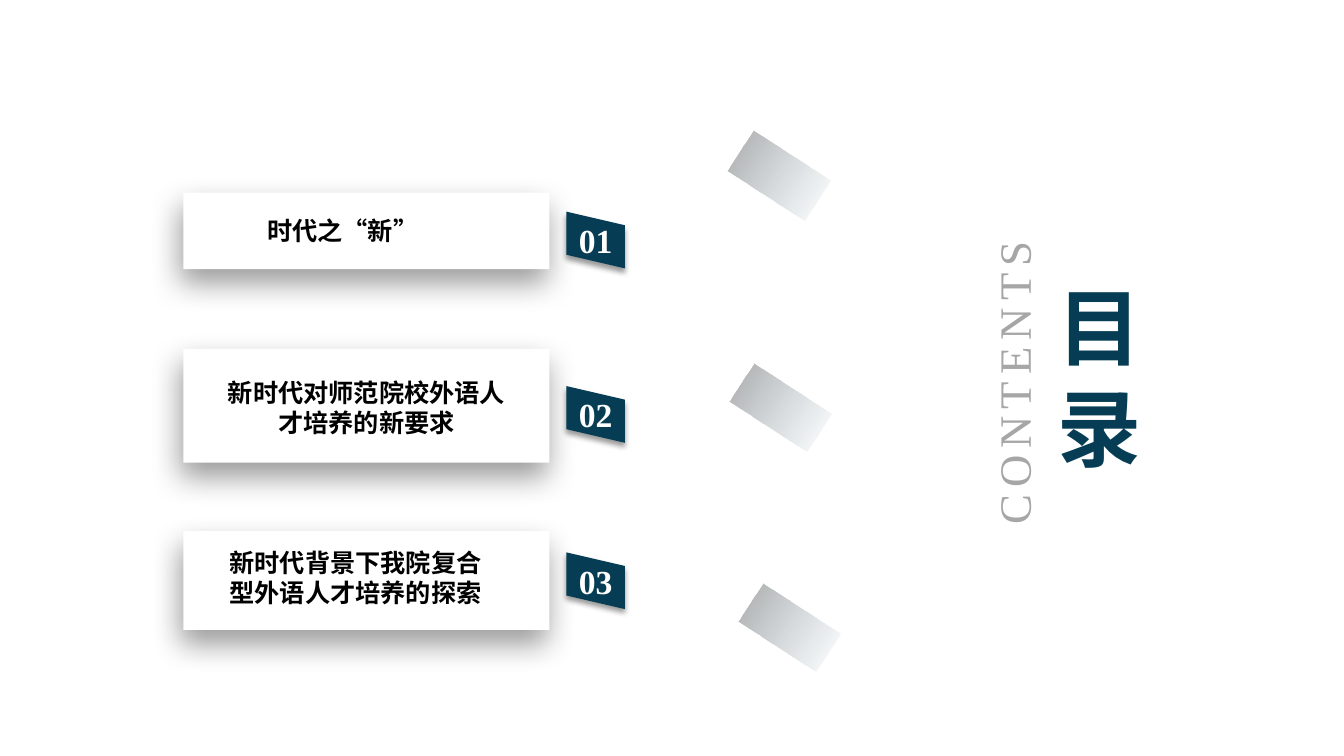
from lxml.etree import SubElement
from pptx import Presentation
from pptx.dml.color import RGBColor
from pptx.enum.shapes import MSO_SHAPE as Preset
from pptx.enum.text import MSO_ANCHOR as Anchor, MSO_AUTO_SIZE as AutoSize, PP_ALIGN as Align
from pptx.oxml.ns import qn
from pptx.util import Inches, Pt

WHITE = RGBColor(0xFF, 0xFF, 0xFF)
BLACK = RGBColor(0x00, 0x00, 0x00)
TEAL = RGBColor(0x06, 0x3D, 0x54)
GREY = RGBColor(0xA6, 0xA6, 0xA6)
CHINESE = "Noto Sans CJK SC"
LATIN = "Times New Roman"

presentation = Presentation()
presentation.slide_width = Inches(13.33)
presentation.slide_height = Inches(7.5)
slide = presentation.slides.add_slide(presentation.slide_layouts[5])
shapes = slide.shapes
column = presentation.slide_width / 100
row = presentation.slide_height / 100


def write(shape, text, size, color, font, align=Align.CENTER, anchor=Anchor.MIDDLE):
    frame = shape.text_frame
    frame.word_wrap = True
    frame.vertical_anchor = anchor
    paragraph = frame.paragraphs[0]
    paragraph.alignment = align
    run = paragraph.add_run()
    run.text = text
    run.font.size = Pt(size)
    run.font.bold = True
    run.font.color.rgb = color
    run.font.name = font
    if font == CHINESE:
        paragraph.line_spacing = Pt(size * 1.2)
        east_asian = SubElement(run.font._element, qn("a:ea"))
        east_asian.set("typeface", font)
    return run


def add_shadow(effects, blur, distance, angle):
    shadow = SubElement(effects, qn("a:outerShdw"), blurRad=str(Pt(blur)), dist=str(Pt(distance)),
                        dir=str(angle * 60000), algn="t", rotWithShape="0")
    color = SubElement(shadow, qn("a:srgbClr"), val=str(BLACK))
    SubElement(color, qn("a:alpha"), val="40000")


items = [
    ("01", "时代之“新”", 25.47, 10.13, 28, None, Anchor.MIDDLE),
    ("02", "新时代对师范院校外语人才培养的新要求", 46.13, 15.07, 51.07,
     (16.13, 49.2, 22.28, 9.47), Anchor.MIDDLE),
    ("03", "新时代背景下我院复合型外语人才培养的探索", 70.27, 13.07, 73.07,
     (15.98, 71.73, 20.93, 13.47), Anchor.TOP),
]
badge_left, badge_right = 42.15 * column, 46.5 * column
badge_side, badge_slant = 5.7 * row, 1.8 * row

for number, topic, card_top, card_height, badge_top, label_box, anchor in items:
    card = shapes.add_shape(Preset.RECTANGLE, int(13.65 * column), int(card_top * row),
                            int(27.23 * column), int(card_height * row))
    top = badge_top * row
    outline = shapes.build_freeform(int(badge_left), int(top))
    outline.add_line_segments([
        (int(badge_left), int(top + badge_side)),
        (int(badge_right), int(top + badge_side + badge_slant)),
        (int(badge_right), int(top + badge_slant)),
    ])
    badge = outline.convert_to_shape()
    for shape, color, shadow in ((card, WHITE, (22, 10, 101)), (badge, TEAL, (4, 3, 90))):
        shape.fill.solid()
        shape.fill.fore_color.rgb = color
        shape.line.fill.background()
        shape.shadow.inherit = False
        add_shadow(shape._element.spPr.find(qn("a:effectLst")), *shadow)
    write(badge, number, 24, WHITE, LATIN)
    if label_box:
        left, top, width, height = label_box
        label = shapes.add_textbox(int(left * column), int(top * row),
                                   int(width * column), int(height * row))
    else:
        label = card
        label.text_frame.margin_left = Inches(0.12)
        label.text_frame.margin_right = Inches(0.59)
        label.text_frame.margin_top = label.text_frame.margin_bottom = 0
    write(label, topic, 18, BLACK, CHINESE, anchor=anchor)

subtitle = shapes.add_textbox(int(61.2 * column), int(46.27 * row), int(28.35 * column), int(8.8 * row))
subtitle.rotation = 270
subtitle_run = write(subtitle, "CONTENTS", 32, GREY, LATIN)
subtitle_run.font.bold = False
subtitle_run.font._element.set("spc", "500")
subtitle.text_frame.word_wrap = False

title = shapes.title
title.left, title.top = int(77.93 * column), int(41.07 * row)
title.width, title.height = int(4.58 * column), int(17.47 * row)
title.text_frame.auto_size = AutoSize.NONE
title_run = write(title, "目录", 60, TEAL, CHINESE, Align.LEFT)
title_effects = SubElement(title_run.font._element, qn("a:effectLst"))
title_run.font._element.find(qn("a:solidFill")).addnext(title_effects)
add_shadow(title_effects, 3, 3, 45)

for left, top, height in ((54.53, 20, 6.4), (54.68, 50.93, 6), (55.35, 80, 6)):
    tile = shapes.add_shape(Preset.RECTANGLE, int(left * column), int(top * row),
                            int(6.83 * column), int(height * row))
    tile.rotation = 33
    tile.shadow.inherit = False
    tile.line.fill.background()
    tile.fill.gradient()
    tile.fill.gradient_angle = 0
    for stop, color, opacity in zip(tile.fill.gradient_stops, (BLACK, TEAL), (34, 0)):
        stop.color.rgb = color
        SubElement(stop._gs.find(qn("a:srgbClr")), qn("a:alpha"), val=str(opacity * 1000))

presentation.save("out.pptx")
